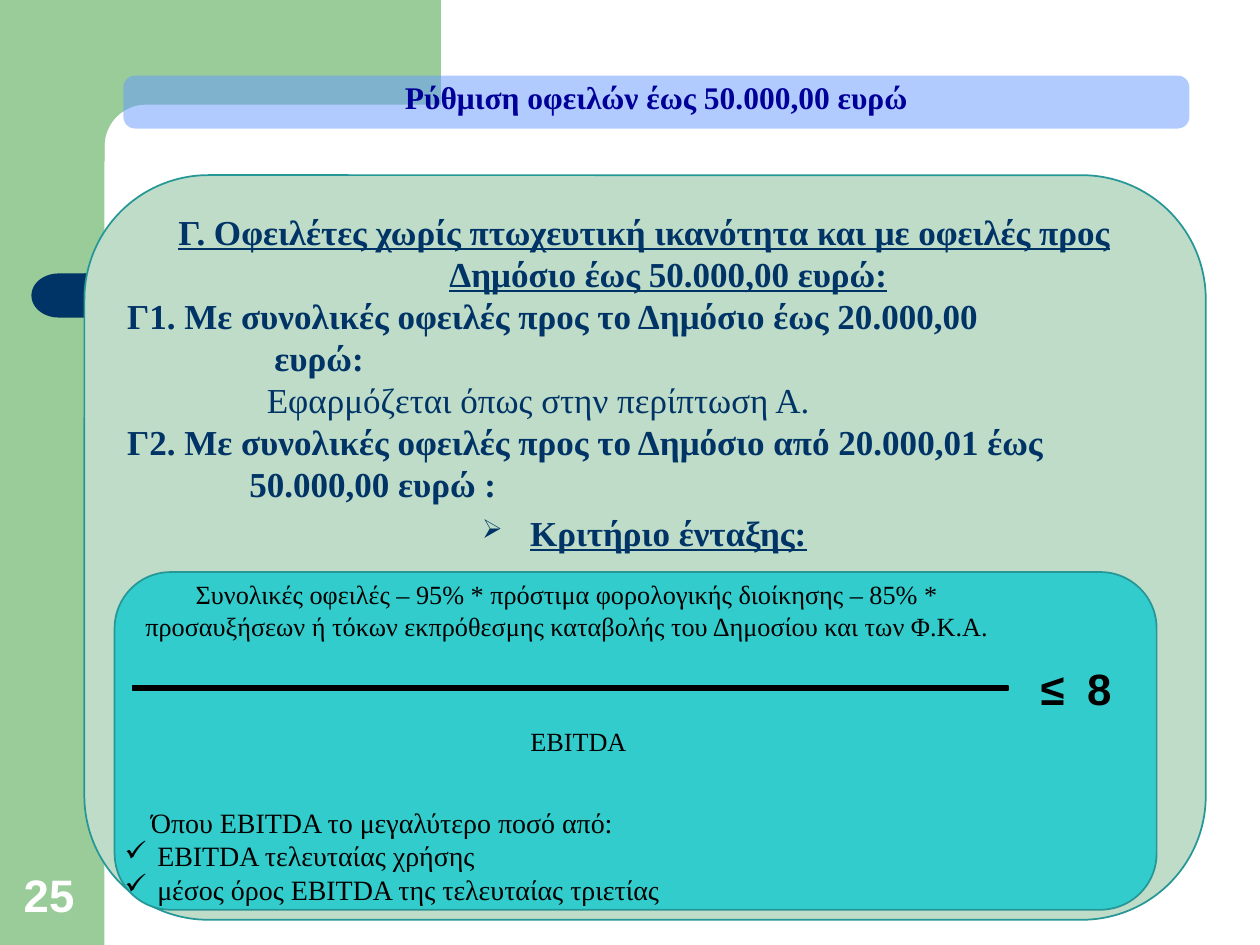
from math import cos, pi, sin

from lxml.etree import SubElement
from pptx import Presentation
from pptx.dml.color import RGBColor
from pptx.enum.shapes import MSO_SHAPE
from pptx.enum.text import MSO_ANCHOR, MSO_AUTO_SIZE, PP_ALIGN
from pptx.oxml.ns import qn
from pptx.util import Inches, Pt

GREEN = RGBColor(0x99, 0xCC, 0x99)
NAVY = RGBColor(0x00, 0x33, 0x66)
PALE = RGBColor(0xBE, 0xDC, 0xC8)
TEAL = RGBColor(0x33, 0xCC, 0xCC)
EDGE = RGBColor(0x26, 0x97, 0x97)
BLUE = RGBColor(0x66, 0x99, 0xFF)
INK = RGBColor(0x00, 0x00, 0x99)
BLACK = RGBColor(0x00, 0x00, 0x00)
WHITE = RGBColor(0xFF, 0xFF, 0xFF)
SERIF = "Times New Roman"
SANS = "Arial"


def apply(item, values):
    for name, value in values.items():
        setattr(item, name, value)


class Deck:
    def __init__(self):
        self.file = Presentation()
        self.file.slide_width = Inches(10)
        self.file.slide_height = Inches(7.5)
        self.slide = self.file.slides.add_slide(self.file.slide_layouts[5])
        self.shapes = self.slide.shapes

    def paint(self, shape, fill, line=None):
        shape.shadow.inherit = False
        shape.fill.solid()
        shape.fill.fore_color.rgb = fill
        if line is None:
            shape.line.fill.background()
        else:
            shape.line.color.rgb = line
            shape.line.width = Pt(1)
        return shape

    def block(self, kind, box, fill, line=None, round=None, alpha=None):
        shape = self.shapes.add_shape(kind, *map(Inches, box))
        self.paint(shape, fill, line)
        if round is not None:
            shape.adjustments[0] = round
        if alpha is not None:
            color = shape.element.spPr.find(".//" + qn("a:srgbClr"))
            SubElement(color, qn("a:alpha"), val=str(alpha * 1000))
        return shape

    def free(self, points, fill):
        first, *rest = points
        pen = self.shapes.build_freeform(*map(Inches, first), scale=1.0)
        pen.add_line_segments([tuple(map(Inches, spot)) for spot in rest])
        return self.paint(pen.convert_to_shape(), fill)

    def label(self, shape, lines, font, frame=None):
        body = shape.text_frame
        apply(body, {"word_wrap": True, "auto_size": MSO_AUTO_SIZE.NONE,
                     "vertical_anchor": MSO_ANCHOR.TOP, **(frame or {})})
        for place, (text, style) in enumerate(lines):
            para = body.paragraphs[0] if place == 0 else body.add_paragraph()
            run = para.add_run()
            run.text = text
            look = {**font, **style.get("font", {})}
            run.font.color.rgb = look.pop("color")
            apply(run.font, look)
            apply(para, {"alignment": PP_ALIGN.LEFT, **style.get("para", {})})
            self.indent(para, style)
            if "track" in style:
                run.font._element.set("spc", str(style["track"] * 100))

    def indent(self, para, style):
        props = para._p.get_or_add_pPr()
        left, first = style.get("indent", (0, 0))
        props.set("marL", str(Inches(left)))
        props.set("indent", str(Inches(first)))
        if "mark" in style:
            size = style.get("scale", 100) * 1000
            SubElement(props, qn("a:buSzPct"), val=str(size))
            SubElement(props, qn("a:buChar"), char=style["mark"])
        else:
            SubElement(props, qn("a:buNone"))

    def text(self, box, lines, font, frame=None):
        shape = self.shapes.add_textbox(*map(Inches, box))
        self.label(shape, lines, font, frame)

    def title(self, box, lines, font):
        shape = self.shapes.title
        names = ("left", "top", "width", "height")
        apply(shape, dict(zip(names, map(Inches, box))))
        edges = {"margin_top": Inches(0.05), "margin_bottom": Inches(0.05)}
        self.label(shape, lines, font, edges)
        self.shapes.element.append(shape.element)


def back(deck):
    deck.block(MSO_SHAPE.RECTANGLE, (0, 0, 0.83, 7.5), GREEN)
    turn = [pi / 2 * step / 12 for step in range(13)]
    arc = [(1.16 - 0.33 * sin(a), 1.16 - 0.33 * cos(a)) for a in turn]
    deck.free([(0.5, 0), (3.5, 0), (3.5, 0.83), *arc,
               (0.83, 1.28), (0.5, 1.28)], GREEN)
    deck.block(MSO_SHAPE.ROUNDED_RECTANGLE, (0.67, 2.17, 7.67, 0.35),
               NAVY, round=0)
    cap = deck.block(MSO_SHAPE.FLOWCHART_DELAY, (0.25, 2.17, 0.43, 0.35), NAVY)
    cap.element.spPr.find(qn("a:xfrm")).set("flipH", "1")


def main():
    deck = Deck()
    back(deck)
    mid = {"alignment": PP_ALIGN.CENTER}
    hang = (0.38, -0.38)
    small = {"size": Pt(15), "name": SERIF, "color": BLACK}

    deck.block(MSO_SHAPE.ROUNDED_RECTANGLE, (0.67, 1.39, 8.9, 5.91),
               PALE, EDGE)
    deck.text((0.91, 1.62, 8.41, 5.59), [
        ("Γ. Οφειλέτες χωρίς πτωχευτική ικανότητα και με οφειλές προς "
         "Δημόσιο έως 50.000,00 ευρώ:",
         {"para": mid, "indent": hang, "font": {"underline": True}}),
        ("Γ1. Με συνολικές οφειλές προς το Δημόσιο έως 20.000,00",
         {"indent": hang}),
        ("ευρώ:", {"indent": (1.17, 0)}),
        ("Εφαρμόζεται όπως στην περίπτωση Α.",
         {"indent": (1.11, 0), "font": {"bold": False}}),
        ("Γ2. Με συνολικές οφειλές προς το Δημόσιο από 20.000,01 έως",
         {"indent": hang}),
        ("50.000,00 ευρώ :", {"indent": (0.97, 0)}),
        ("Κριτήριο ένταξης:",
         {"para": {**mid, "space_before": Pt(4)}, "indent": hang,
          "mark": "➢", "scale": 75, "font": {"underline": True}}),
    ], {"size": Pt(20), "name": SERIF, "bold": True, "color": NAVY})

    deck.text((0.09, 6.83, 0.64, 0.53), [("25", {})],
              {"size": Pt(26), "name": SANS, "bold": True, "color": WHITE},
              {"vertical_anchor": MSO_ANCHOR.BOTTOM})

    deck.block(MSO_SHAPE.ROUNDED_RECTANGLE, (0.98, 0.6, 8.46, 0.42),
               BLUE, round=0.22, alpha=50)
    deck.title((0.98, 0.63, 8.46, 0.37), [
        ("Ρύθμιση οφειλών έως 50.000,00 ευρώ",
         {"para": {**mid, "line_spacing": 0.8}}),
    ], {"size": Pt(18), "name": SERIF, "bold": True, "color": INK})

    card = deck.block(MSO_SHAPE.FLOWCHART_ALTERNATE_PROCESS,
                      (0.91, 4.54, 8.27, 2.68), TEAL, EDGE)
    deck.label(card, [("EBITDA", {"indent": (3.07, 0)})], small,
               {"vertical_anchor": MSO_ANCHOR.MIDDLE})
    deck.text((0.51, 4.54, 7.48, 0.61), [
        ("Συνολικές οφειλές – 95% * πρόστιμα φορολογικής διοίκησης – 85% * "
         "προσαυξήσεων ή τόκων εκπρόθεσμης καταβολής του Δημοσίου και των "
         "Φ.Κ.Α.", {"para": mid, "indent": (0.5, 0)}),
    ], small)
    deck.block(MSO_SHAPE.MATH_MINUS, (-0.2, 5.4, 9.45, 0.12), BLACK, BLACK)
    deck.text((7.83, 5.2, 1.42, 0.52), [("≤ 8", {"para": mid, "track": 3})],
              {"size": Pt(25), "name": SANS, "bold": True, "color": BLACK})

    tick = {"indent": (1.05, -0.26), "mark": "✓"}
    deck.text((0.1, 6.34, 8.27, 0.91), [
        ("Όπου EBITDA το μεγαλύτερο ποσό από:", {"indent": (1, 0)}),
        ("EBITDA τελευταίας χρήσης", tick),
        ("μέσος όρος EBITDA της τελευταίας τριετίας", tick),
    ], {**small, "size": Pt(16)})
    deck.file.save("out.pptx")


if __name__ == "__main__":
    main()
